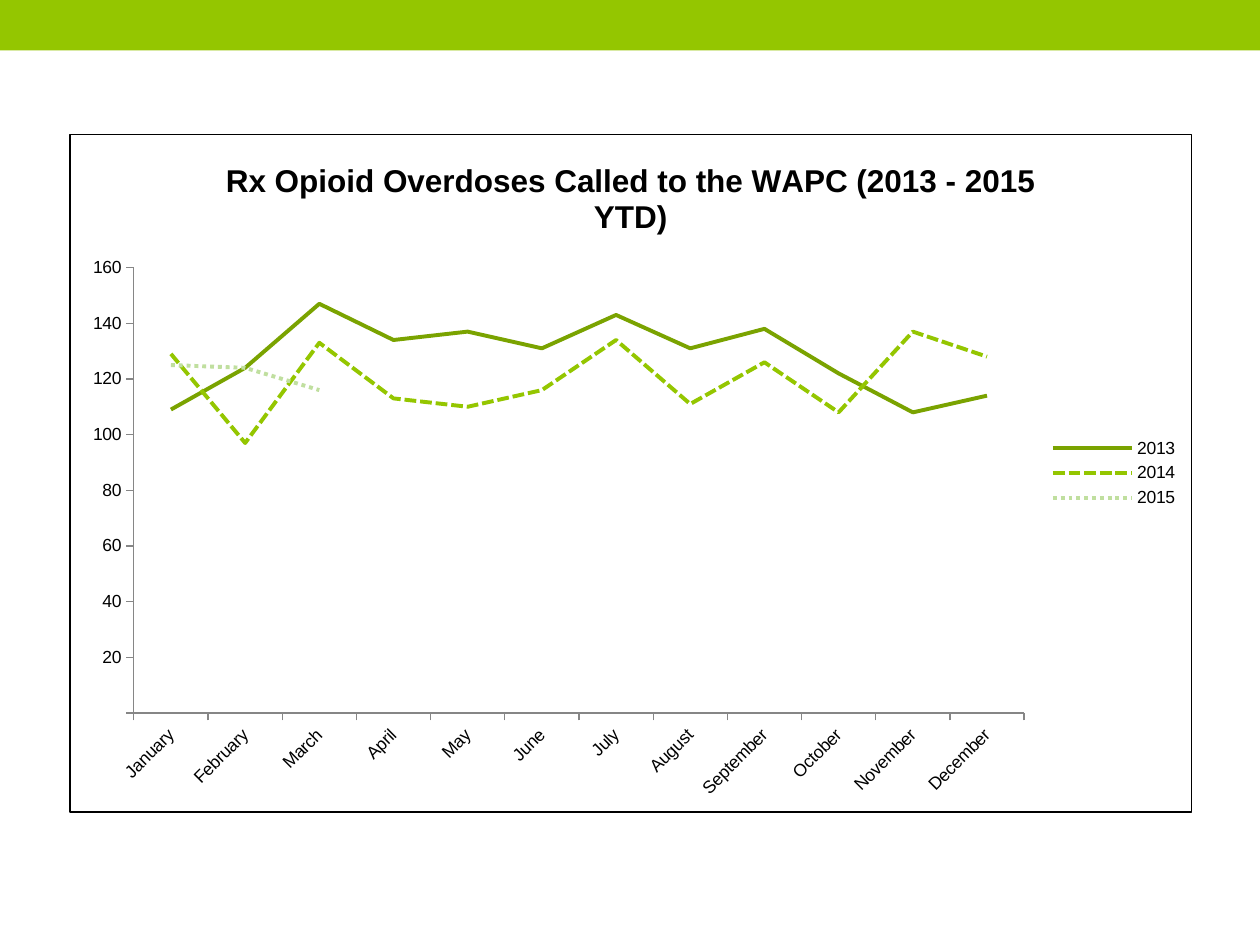
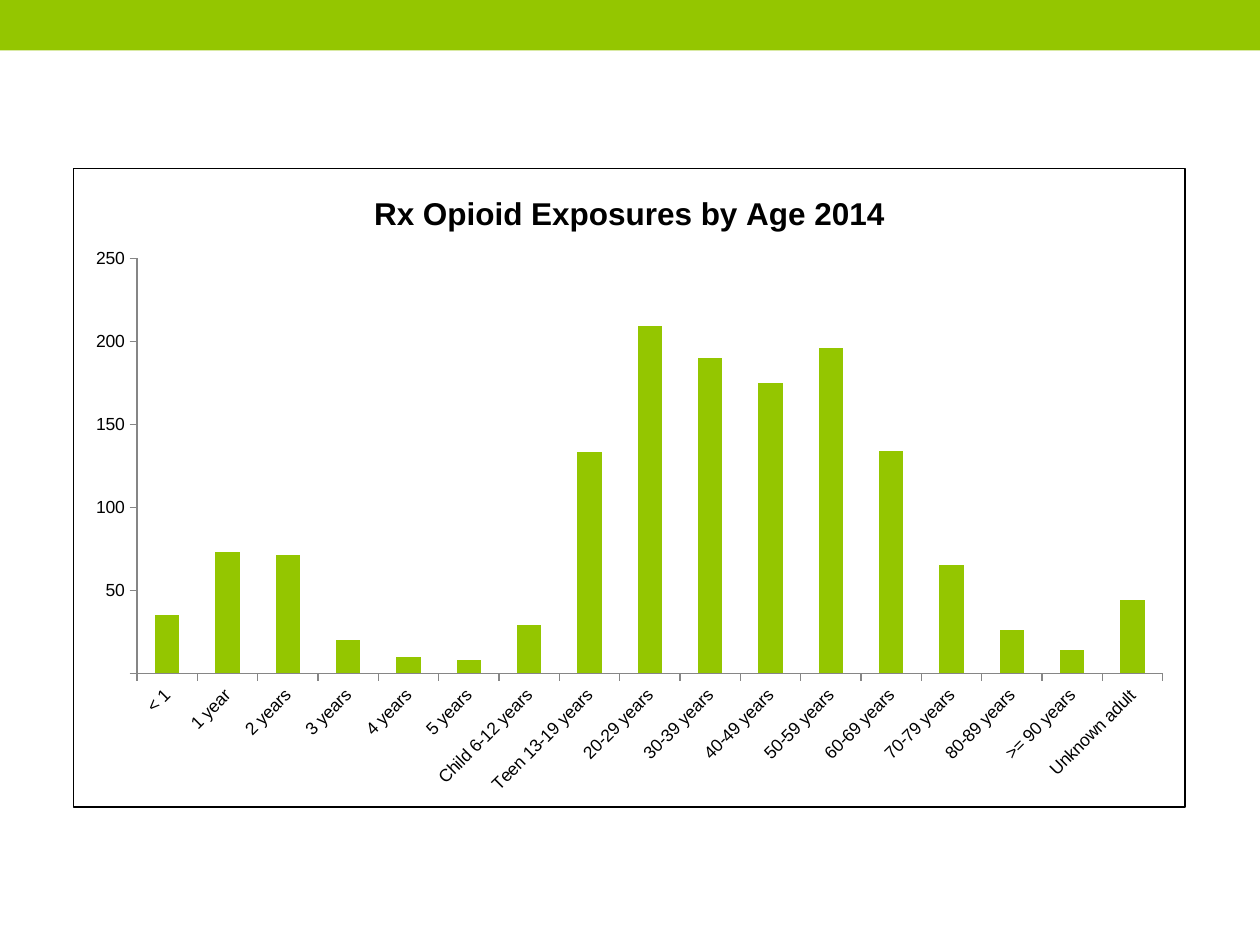
from lxml import etree
from pptx import Presentation
from pptx.chart.data import CategoryChartData
from pptx.dml.color import RGBColor
from pptx.enum.chart import XL_CHART_TYPE, XL_LEGEND_POSITION, XL_TICK_MARK
from pptx.enum.dml import MSO_LINE
from pptx.enum.shapes import MSO_SHAPE
from pptx.oxml import parse_xml
from pptx.oxml.ns import nsdecls, qn
from pptx.util import Inches, Pt

GREEN = RGBColor(0x94, 0xC6, 0x00)
DARK_GREEN = RGBColor(0x7A, 0xA3, 0x00)
PALE_GREEN = RGBColor(0xC0, 0xDF, 0x9F)
BLACK = RGBColor(0, 0, 0)
GRAY = RGBColor(0x86, 0x86, 0x86)
FONT = "Arial"

MONTHS = ["January", "February", "March", "April", "May", "June", "July",
          "August", "September", "October", "November", "December"]
CALLS = {
    "2013": [109, 124, 147, 134, 137, 131, 143, 131, 138, 122, 108, 114],
    "2014": [129, 97, 133, 113, 110, 116, 134, 111, 126, 108, 137, 128],
    "2015": [125, 124, 116] + [None] * 9,
}
AGES = (["< 1", "1 year"] + [f"{n} years" for n in range(2, 6)]
        + ["Child 6-12 years", "Teen 13-19 years"]
        + [f"{n}-{n + 9} years" for n in range(20, 90, 10)]
        + [">= 90 years", "Unknown adult"])
EXPOSURES = {"Series 1": [35, 73, 71, 20, 10, 8, 29, 133, 209, 190, 175,
                          196, 134, 65, 26, 14, 44]}


def add_chart_slide(prs, kind, title, cats, series, box, plot_area, top, step, fmt):
    s = prs.slides.add_slide(prs.slide_layouts[6])
    band = s.shapes.add_shape(MSO_SHAPE.RECTANGLE, 0, 0, prs.slide_width, Inches(0.4))
    band.shadow.inherit = False
    band.fill.solid()
    band.fill.fore_color.rgb = GREEN
    band.line.fill.background()

    data = CategoryChartData()
    data.categories = cats
    for name, values in series.items():
        data.add_series(name, values)
    chart = s.shapes.add_chart(kind, *[Inches(v) for v in box], data).chart
    chart.font.name = FONT
    chart.font.size = Pt(10)
    chart.font.color.rgb = BLACK
    chart.has_legend = False
    chart.plots[0].vary_by_categories = False

    p = chart.chart_title.text_frame.paragraphs[0]
    p.text = title
    p.font.name = FONT
    p.font.size = Pt(18)
    p.font.bold = True
    p.font.color.rgb = BLACK

    for axis in (chart.category_axis, chart.value_axis):
        axis.has_major_gridlines = False
        axis.major_tick_mark = XL_TICK_MARK.OUTSIDE
        axis.minor_tick_mark = XL_TICK_MARK.NONE
        axis.format.line.color.rgb = GRAY
        axis.tick_labels.font.size = Pt(10)
    value_axis = chart.value_axis
    value_axis.minimum_scale = 0
    value_axis.maximum_scale = top
    value_axis.major_unit = step
    value_axis.tick_labels.number_format = fmt
    value_axis.tick_labels.number_format_is_linked = False

    root = chart.element if hasattr(chart, "element") else chart._chartSpace
    label_body = root.find(".//" + qn("c:catAx")).find(qn("c:txPr")).find(qn("a:bodyPr"))
    label_body.set("rot", "-2700000")
    label_body.set("vert", "horz")

    area = root.find(".//" + qn("c:plotArea"))
    layout = area.find(qn("c:layout"))
    if layout is not None:
        area.remove(layout)
    layout = parse_xml(f'<c:layout {nsdecls("c")}><c:manualLayout/></c:layout>')
    rules = [("layoutTarget", "inner"), ("xMode", "edge"), ("yMode", "edge")]
    for tag, val in rules + list(zip("xywh", plot_area)):
        etree.SubElement(layout[0], qn(f"c:{tag}")).set("val", str(val))
    area.insert(0, layout)

    border = parse_xml(
        f'<c:spPr {nsdecls("c", "a")}><a:solidFill><a:srgbClr val="FFFFFF"/></a:solidFill>'
        f'<a:ln w="{Pt(0.75)}"><a:solidFill><a:srgbClr val="{BLACK}"/></a:solidFill></a:ln></c:spPr>')
    root.find(qn("c:chart")).addnext(border)
    return chart


prs = Presentation()
prs.slide_width = Inches(10)
prs.slide_height = Inches(7.5)

chart = add_chart_slide(
    prs, XL_CHART_TYPE.LINE, "Rx Opioid Overdoses Called to the WAPC (2013 - 2015 YTD)",
    MONTHS, CALLS, (0.55, 1.06, 8.91, 5.39), (0.057, 0.197, 0.794, 0.657), 160, 20, "???")
chart.has_legend = True
chart.legend.position = XL_LEGEND_POSITION.RIGHT
chart.legend.include_in_layout = False
styles = [(DARK_GREEN, MSO_LINE.SOLID), (GREEN, MSO_LINE.SQUARE_DOT),
          (PALE_GREEN, MSO_LINE.ROUND_DOT)]
for ser, (color, dash) in zip(chart.series, styles):
    ser.smooth = False
    ser.format.line.width = Pt(2.25)
    ser.format.line.color.rgb = color
    ser.format.line.dash_style = dash
    if dash == MSO_LINE.SQUARE_DOT:
        ser.format.line._ln.find(qn("a:prstDash")).set("val", "sysDash")

chart = add_chart_slide(
    prs, XL_CHART_TYPE.COLUMN_CLUSTERED, "Rx Opioid Exposures by Age 2014",
    AGES, EXPOSURES, (0.58, 1.33, 8.83, 5.08), (0.057, 0.141, 0.923, 0.65), 250, 50, "??")
chart.plots[0].gap_width = 150
fill = chart.series[0].format.fill
fill.solid()
fill.fore_color.rgb = GREEN

prs.save("out.pptx")
